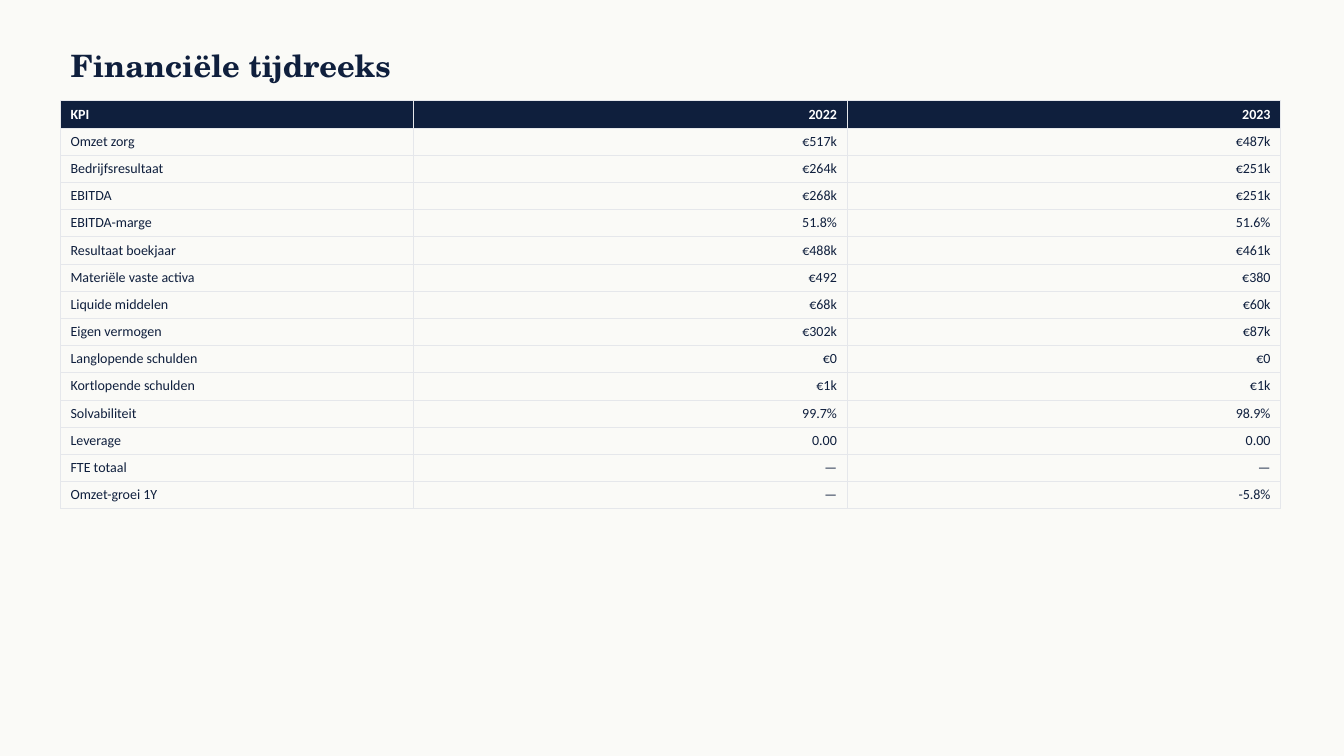
from lxml import etree
from pptx import Presentation
from pptx import util as u
from pptx.dml import color
from pptx.enum import text
from pptx.oxml import ns

HEADING = "Financiële tijdreeks"
HEADER = ("KPI", "2022", "2023")
KPIS = [
    ("Omzet zorg", "€517k", "€487k"),
    ("Bedrijfsresultaat", "€264k", "€251k"),
    ("EBITDA", "€268k", "€251k"),
    ("EBITDA-marge", "51.8%", "51.6%"),
    ("Resultaat boekjaar", "€488k", "€461k"),
    ("Materiële vaste activa", "€492", "€380"),
    ("Liquide middelen", "€68k", "€60k"),
    ("Eigen vermogen", "€302k", "€87k"),
    ("Langlopende schulden", "€0", "€0"),
    ("Kortlopende schulden", "€1k", "€1k"),
    ("Solvabiliteit", "99.7%", "98.9%"),
    ("Leverage", "0.00", "0.00"),
    ("FTE totaal", "—", "—"),
    ("Omzet-groei 1Y", "—", "-5.8%"),
]
COLUMN_WIDTHS = (3.5, 4.3, 4.3)
ROW_HEIGHT = 0.27
LEFT, TABLE_TOP = 0.6, 1
NAVY, WHITE, PAPER, GRID = "0F1F3D", "FFFFFF", "FAFAF7", "E5E7EB"


def rgb(value):
    return color.RGBColor.from_string(value)


def write(frame, content, size=10, font="Calibri", ink=NAVY, bold=False,
          align=text.PP_ALIGN.LEFT):
    paragraph = frame.paragraphs[0]
    paragraph.alignment = align
    run = paragraph.add_run()
    run.text = content
    run.font.size = u.Pt(size)
    run.font.name = font
    run.font.bold = bold
    run.font.color.rgb = rgb(ink)


def add_borders(cell, line_color, points):
    properties = cell._tc.get_or_add_tcPr()
    for side in ("lnL", "lnR", "lnT", "lnB"):
        line = etree.SubElement(properties, ns.qn(f"a:{side}"), w=str(u.Pt(points)))
        fill = etree.SubElement(line, ns.qn("a:solidFill"))
        etree.SubElement(fill, ns.qn("a:srgbClr"), val=line_color)


def add_heading(slide):
    heading = slide.shapes.title
    heading.left, heading.top = u.Inches(LEFT), u.Inches(0.4)
    heading.width, heading.height = u.Inches(12), u.Inches(0.5)
    frame = heading.text_frame
    frame.word_wrap = True
    frame.auto_size = text.MSO_AUTO_SIZE.NONE
    frame.vertical_anchor = text.MSO_ANCHOR.MIDDLE
    write(frame, HEADING, size=22, font="TeX Gyre Schola", bold=True)


def add_kpi_table(slide):
    rows = [HEADER] + KPIS
    kpi_table = slide.shapes.add_table(
        len(rows), len(HEADER), u.Inches(LEFT), u.Inches(TABLE_TOP),
        u.Inches(sum(COLUMN_WIDTHS)), u.Inches(ROW_HEIGHT * len(rows))).table
    kpi_table.horz_banding = False
    for column, width in zip(kpi_table.columns, COLUMN_WIDTHS):
        column.width = u.Inches(width)
    for r, row in enumerate(rows):
        kpi_table.rows[r].height = u.Inches(ROW_HEIGHT)
        is_header = r == 0
        for c, content in enumerate(row):
            cell = kpi_table.cell(r, c)
            add_borders(cell, GRID, 0.5)
            if is_header:
                cell.fill.solid()
                cell.fill.fore_color.rgb = rgb(NAVY)
            else:
                cell.fill.background()
            write(cell.text_frame, content, bold=is_header,
                  ink=WHITE if is_header else NAVY,
                  align=text.PP_ALIGN.RIGHT if c else text.PP_ALIGN.LEFT)


def main():
    deck = Presentation()
    deck.slide_width, deck.slide_height = u.Inches(13.33), u.Inches(7.5)
    slide = deck.slides.add_slide(deck.slide_layouts[5])
    slide.background.fill.solid()
    slide.background.fill.fore_color.rgb = rgb(PAPER)
    add_heading(slide)
    add_kpi_table(slide)
    deck.save("out.pptx")


if __name__ == "__main__":
    main()
